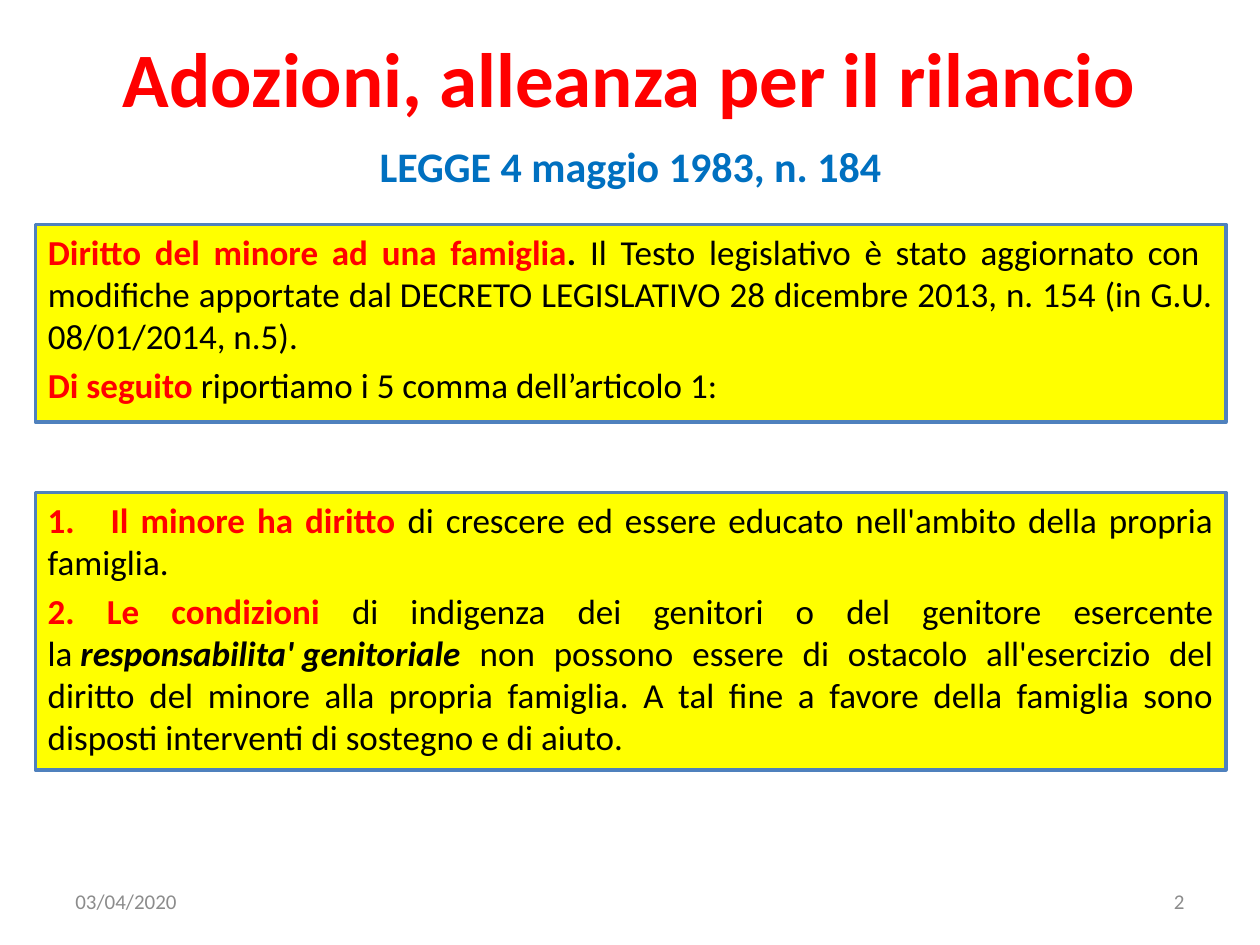
from lxml import etree
from pptx import Presentation
from pptx import util as u
from pptx.dml.color import RGBColor
from pptx.enum import shapes, text
from pptx.oxml.ns import qn

Inches, Pt = u.Inches, u.Pt
COLORS = {"red": "FF0000", "black": "000000", "blue": "0070C0",
          "yellow": "FFFF00", "border": "4F81BD", "gray": "8C8C8C"}
LEFT, WIDTH = 0.28, 9.45
ALIGN = text.PP_ALIGN
NBSP = chr(160)  # no-break space, keeps words on one line


def set_line(sp, wording, size, color, align, bold=False):
    """Fill a shape with one line of evenly formatted text."""
    p = sp.text_frame.paragraphs[0]
    p.text, p.alignment = wording, align
    p.font.name, p.font.size, p.font.bold = "Calibri", Pt(size), bold
    p.font.color.rgb = RGBColor.from_string(COLORS[color])


def fill_panel(sp, paragraphs):
    """Format a yellow panel; each run is (wording, color, bold, italic)."""
    sp.fill.solid()
    sp.fill.fore_color.rgb = RGBColor.from_string(COLORS["yellow"])
    sp.line.color.rgb = RGBColor.from_string(COLORS["border"])
    sp.line.width = Pt(2)
    tf = sp.text_frame
    tf.word_wrap = True
    tf.auto_size = text.MSO_AUTO_SIZE.NONE
    tf.vertical_anchor = text.MSO_ANCHOR.TOP
    for i, runs in enumerate(paragraphs):
        p = tf.add_paragraph() if i else tf.paragraphs[0]
        p.alignment, p.space_before = ALIGN.JUSTIFY, Pt(4)
        if "\t" in runs[0][0]:
            tabs = etree.SubElement(p._p.get_or_add_pPr(), qn("a:tabLst"))
            etree.SubElement(tabs, qn("a:tab"), pos=str(Inches(0.5)), algn="l")
        p.font.name, p.font.size = "Calibri", Pt(20)
        for wording, color, bold, italic in runs:
            r = p.add_run()
            r.text = wording
            r.font.bold, r.font.italic = bold, italic
            r.font.color.rgb = RGBColor.from_string(COLORS[color])


prs = Presentation()
prs.slide_width, prs.slide_height = Inches(10), Inches(7.5)
s = prs.slides.add_slide(prs.slide_layouts[0])

# Title
title = s.shapes.title
title.left, title.top = Inches(0.75), Inches(0.21)
title.width, title.height = Inches(8.5), Inches(0.79)
title.text_frame.vertical_anchor = text.MSO_ANCHOR.MIDDLE
set_line(title, "Adozioni, alleanza per il rilancio", 44, "red", ALIGN.CENTER, True)

# Introduction panel
intro = s.placeholders[1]
intro.left, intro.top = Inches(LEFT), Inches(1.78)
intro.width, intro.height = Inches(WIDTH), Inches(1.57)
fill_panel(intro, [
    [("Diritto del minore ad una famiglia", "red", True, False),
     (". ", "black", True, False),
     (f"Il Testo legislativo è stato aggiornato con  modifiche apportate dal{NBSP}"
      "DECRETO LEGISLATIVO 28 dicembre 2013, n. 154 (in G.U. 08/01/2014, n.5).",
      "black", False, False)],
    [("Di seguito ", "red", True, False),
     ("riportiamo i 5 comma dell’articolo 1:", "black", False, False)],
])

# Law heading, date and page number
for wording, left, top, width, height, size, color, align, bold, anchor in [
    ("LEGGE 4 maggio 1983, n. 184", LEFT, 1.07, WIDTH, 0.5, 24, "blue",
     ALIGN.CENTER, True, text.MSO_ANCHOR.TOP),
    ("03/04/2020", 0.5, 6.95, 2.33, 0.4, 12, "gray",
     ALIGN.LEFT, False, text.MSO_ANCHOR.MIDDLE),
    ("2", 7.17, 6.95, 2.33, 0.4, 12, "gray",
     ALIGN.RIGHT, False, text.MSO_ANCHOR.MIDDLE),
]:
    sp = s.shapes.add_textbox(Inches(left), Inches(top), Inches(width), Inches(height))
    sp.text_frame.word_wrap = True
    sp.text_frame.vertical_anchor = anchor
    set_line(sp, wording, size, color, align, bold)

# Article panel
article = s.shapes.add_shape(shapes.MSO_SHAPE.RECTANGLE, Inches(LEFT), Inches(3.91),
                             Inches(WIDTH), Inches(2.2))
article.shadow.inherit = False
fill_panel(article, [
    [("1.\tIl minore ha diritto ", "red", True, False),
     ("di crescere ed essere educato nell'ambito della propria famiglia.",
      "black", False, False)],
    [("2. Le condizioni ", "red", True, False),
     (f"di indigenza dei genitori o del genitore esercente la{NBSP}",
      "black", False, False),
     (f"responsabilita'{NBSP}genitoriale", "black", True, True),
     (" non possono essere di ostacolo all'esercizio del diritto del minore alla "
      "propria famiglia. A tal fine a favore della famiglia sono disposti "
      "interventi di sostegno e di aiuto.", "black", False, False)],
])

prs.save("out.pptx")
